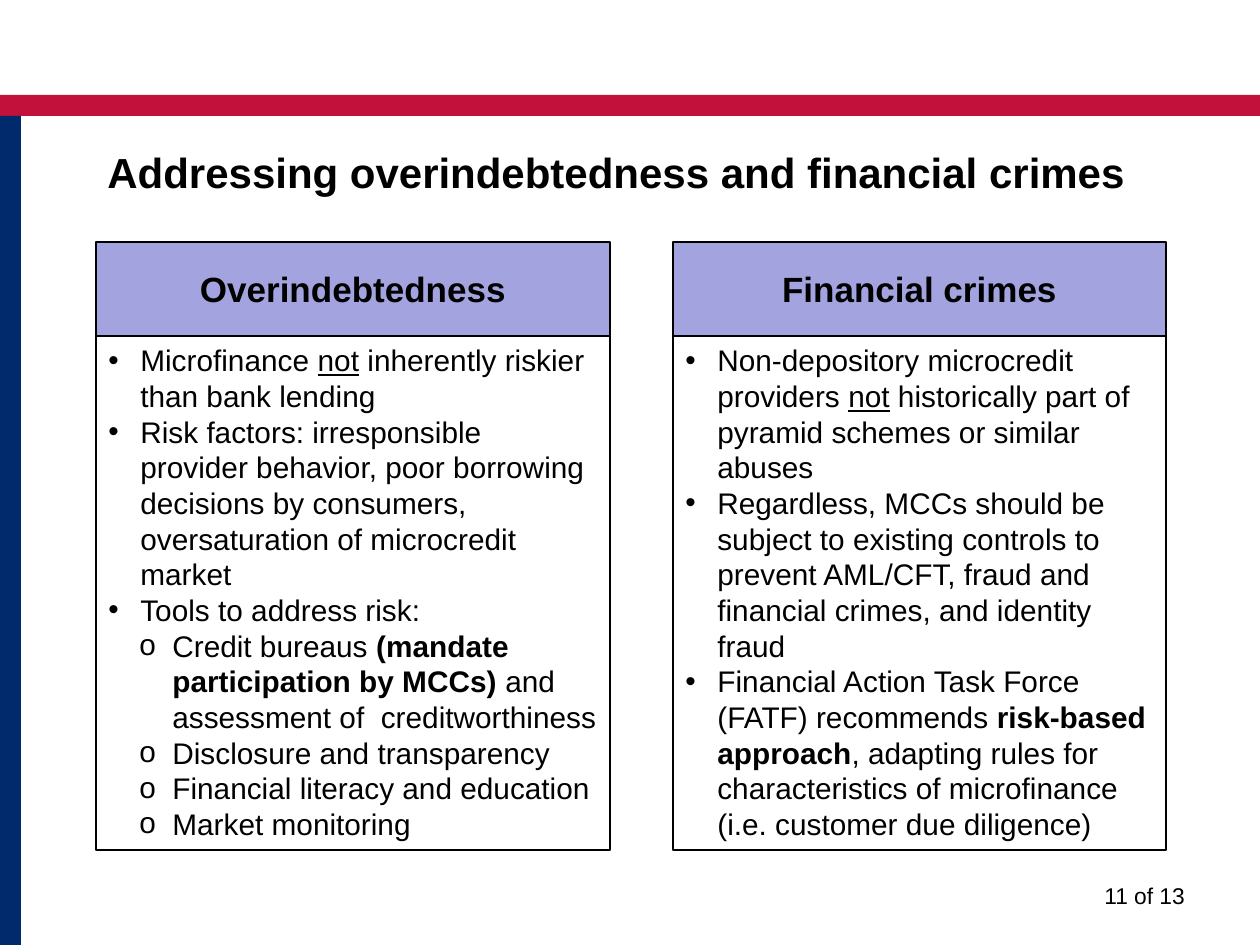
from typing import NamedTuple

from lxml import etree
from pptx import Presentation
from pptx.dml.color import RGBColor
from pptx.enum.shapes import MSO_SHAPE
from pptx.enum.text import MSO_ANCHOR, PP_ALIGN
from pptx.oxml.ns import qn
from pptx.util import Emu, Pt

PX = 914400 / 126
RED = RGBColor(0xC2, 0x11, 0x3A)
NAVY = RGBColor(0x00, 0x2A, 0x6C)
LILAC = RGBColor(0xA3, 0xA3, 0xE0)
BLACK = RGBColor(0, 0, 0)
FONT = "Arial"
RECT = MSO_SHAPE.RECTANGLE
TOP, MIDDLE = MSO_ANCHOR.TOP, MSO_ANCHOR.MIDDLE
LEFT, CENTER, RIGHT = PP_ALIGN.LEFT, PP_ALIGN.CENTER, PP_ALIGN.RIGHT


class Box(NamedTuple):
    x: int
    y: int
    w: int
    h: int


class Run(NamedTuple):
    text: str
    bold: bool = False
    under: bool = False


class Item(NamedTuple):
    runs: list[Run]
    level: int = 0


class Column(NamedTuple):
    x: int
    w: int
    head: str
    items: list[Item]


class Bullet(NamedTuple):
    char: str
    margin: int
    hang: int


BULLETS = [Bullet("•", 32, 32), Bullet("o", 64, 33)]
HEAD_Y, HEAD_H, BODY_H = 242, 94, 514

COLUMNS = [
    Column(96, 514, "Overindebtedness", [
        Item([Run("Microfinance "), Run("not", under=True),
              Run(" inherently riskier than bank lending")]),
        Item([Run("Risk factors: irresponsible provider behavior, poor borrowing "
                  "decisions by consumers, oversaturation of microcredit market")]),
        Item([Run("Tools to address risk:")]),
        Item([Run("Credit bureaus "),
              Run("(mandate participation by MCCs) ", bold=True),
              Run("and assessment of  creditworthiness")], 1),
        Item([Run("Disclosure and transparency")], 1),
        Item([Run("Financial literacy and education")], 1),
        Item([Run("Market monitoring")], 1),
    ]),
    Column(673, 493, "Financial crimes", [
        Item([Run("Non-depository microcredit providers "), Run("not", under=True),
              Run(" historically part of pyramid schemes or similar abuses")]),
        Item([Run("Regardless, MCCs should be subject to existing controls to prevent "
                  "AML/CFT, fraud and financial crimes, and identity fraud")]),
        Item([Run("Financial Action Task Force (FATF) recommends "),
              Run("risk-based approach", bold=True),
              Run(", adapting rules for characteristics of microfinance "
                  "(i.e. customer due diligence)")]),
    ]),
]


def px(length: int) -> Emu:
    return Emu(round(length * PX))


def place(box: Box) -> list[Emu]:
    return [px(side) for side in box]


def draw_rect(slide, box: Box, fill: RGBColor | None, line: RGBColor | None = None):
    shape = slide.shapes.add_shape(RECT, *place(box))
    shape.shadow.inherit = False
    if fill is None:
        shape.fill.background()
    else:
        shape.fill.solid()
        shape.fill.fore_color.rgb = fill
    if line is None:
        shape.line.fill.background()
    else:
        shape.line.color.rgb = line
        shape.line.width = Pt(0.75)
    return shape


def set_font(para, size: int, bold: bool = False) -> None:
    font = para.font
    font.name, font.size, font.bold = FONT, Pt(size), bold
    font.color.rgb = BLACK


def write_line(shape, text: str, size: int, bold: bool, align, anchor) -> None:
    frame = shape.text_frame
    frame.word_wrap = True
    frame.vertical_anchor = anchor
    para = frame.paragraphs[0]
    para.text = text
    para.alignment = align
    set_font(para, size, bold)


def add_bullet(para, level: int) -> None:
    mark = BULLETS[level]
    props = para._p.get_or_add_pPr()
    props.set("marL", str(px(mark.margin)))
    props.set("indent", str(-px(mark.hang)))
    etree.SubElement(props, qn("a:buFont")).set("typeface", FONT)
    etree.SubElement(props, qn("a:buChar")).set("char", mark.char)


def write_list(shape, items: list[Item]) -> None:
    frame = shape.text_frame
    frame.word_wrap = True
    frame.vertical_anchor = TOP
    for i, item in enumerate(items):
        para = frame.add_paragraph() if i else frame.paragraphs[0]
        para.level = item.level
        para.alignment = LEFT
        para.line_spacing = Pt(20.4)
        add_bullet(para, item.level)
        set_font(para, 17)
        for part in item.runs:
            run = para.add_run()
            run.text = part.text
            if part.bold:
                run.font.bold = True
            if part.under:
                run.font.underline = True


def draw_column(slide, col: Column) -> None:
    head = draw_rect(slide, Box(col.x, HEAD_Y, col.w, HEAD_H), LILAC, BLACK)
    write_line(head, col.head, 20, True, CENTER, MIDDLE)
    body = draw_rect(slide, Box(col.x, HEAD_Y + HEAD_H, col.w, BODY_H), None, BLACK)
    write_list(body, col.items)


def main() -> None:
    deck = Presentation()
    deck.slide_width, deck.slide_height = px(1260), px(945)
    slide = deck.slides.add_slide(deck.slide_layouts[6])

    draw_rect(slide, Box(0, 95, 1260, 21), RED)
    draw_rect(slide, Box(0, 116, 21, 829), NAVY)

    title = slide.shapes.add_textbox(*place(Box(95, 140, 1071, 80)))
    write_line(title, "Addressing overindebtedness and financial crimes",
               24, True, LEFT, TOP)
    for col in COLUMNS:
        draw_column(slide, col)
    page = slide.shapes.add_textbox(*place(Box(903, 876, 294, 50)))
    write_line(page, "11 of 13", 13, False, RIGHT, TOP)

    deck.save("out.pptx")


if __name__ == "__main__":
    main()
